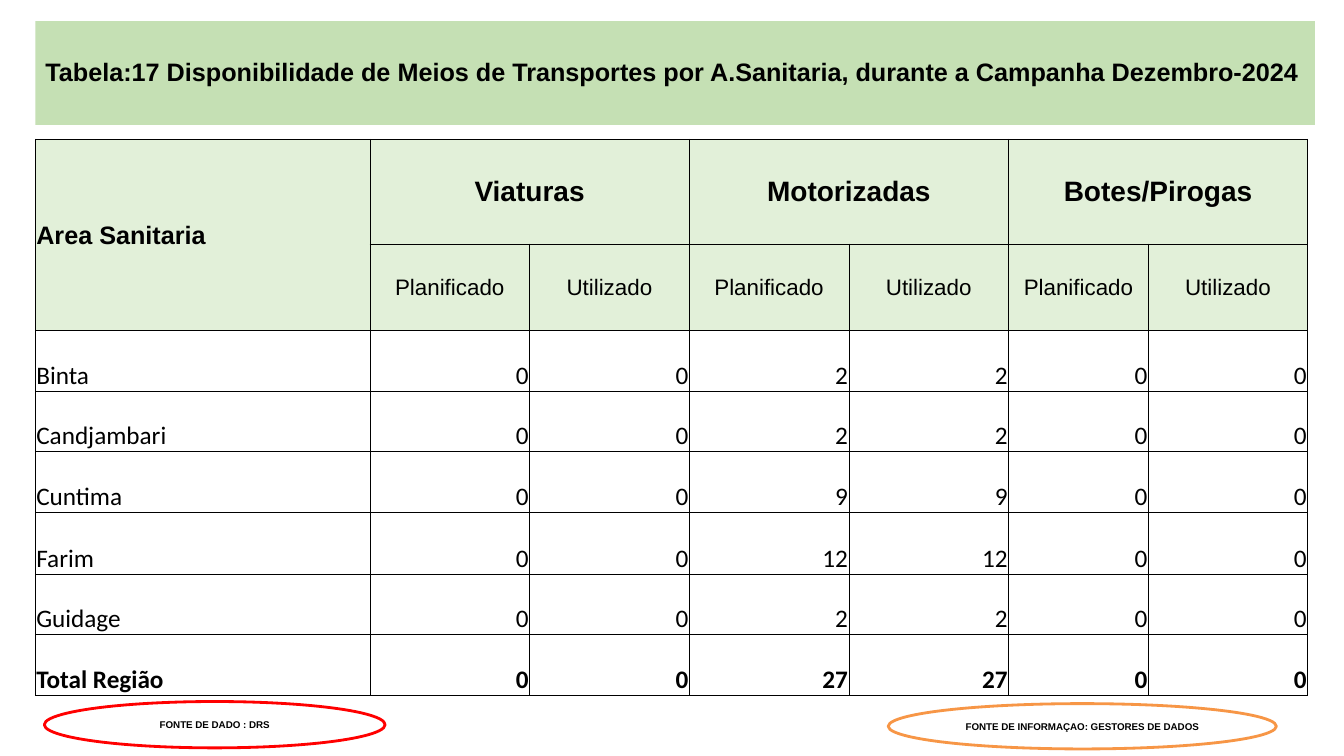
import dataclasses

import pptx
import pptx.dml.color
import pptx.enum.shapes
import pptx.enum.text
import pptx.oxml
import pptx.oxml.ns
import pptx.util

ALIGN = pptx.enum.text.PP_ALIGN
ANCHOR = pptx.enum.text.MSO_ANCHOR


@dataclasses.dataclass(frozen=True)
class Theme:
    head: str = "Arial"
    body: str = "Calibri"
    ink: str = "000000"
    paper: str = "FFFFFF"
    band: str = "C5E0B4"
    pale: str = "E2F0D9"
    red: str = "FF0000"
    amber: str = "F79646"
    big: int = 20
    main: int = 18
    sub: int = 16
    note: int = 7
    rule: float = 0.5
    ring: float = 2


def rgb(code):
    return pptx.dml.color.RGBColor.from_string(code)


class Page:
    """Lengths are hundredths of the slide's width (x) and height (y)."""

    def __init__(self, deck, theme):
        self.theme = theme
        self.wide, self.high = deck.slide_width, deck.slide_height
        self.slide = deck.slides.add_slide(deck.slide_layouts[5])

    def x(self, share):
        return round(self.wide * share / 100)

    def y(self, share):
        return round(self.high * share / 100)

    def box(self, left, top, width, height):
        return self.x(left), self.y(top), self.x(width), self.y(height)

    def label(self, frame, text, size, bold=True, font=None, align=ALIGN.LEFT):
        frame.text = text
        para = frame.paragraphs[0]
        para.alignment = align
        for run in para.runs:
            run.font.name = font or self.theme.head
            run.font.size = pptx.util.Pt(size)
            run.font.bold = bold
            run.font.color.rgb = rgb(self.theme.ink)
        return para

    def title(self, text, *place):
        shape = self.slide.shapes.title
        shape.left, shape.top, shape.width, shape.height = self.box(*place)
        shape.fill.solid()
        shape.fill.fore_color.rgb = rgb(self.theme.band)
        frame = shape.text_frame
        frame.word_wrap = True
        frame.auto_size = pptx.enum.text.MSO_AUTO_SIZE.NONE
        frame.vertical_anchor = ANCHOR.MIDDLE
        self.label(frame, text, self.theme.main).line_spacing = 0.9

    def oval(self, text, line, fill, *place):
        kind = pptx.enum.shapes.MSO_SHAPE.OVAL
        shape = self.slide.shapes.add_shape(kind, *self.box(*place))
        shape.shadow.inherit = False
        if fill:
            shape.fill.solid()
            shape.fill.fore_color.rgb = rgb(fill)
        else:
            shape.fill.background()
        shape.line.color.rgb = rgb(line)
        shape.line.width = pptx.util.Pt(self.theme.ring)
        shape.text_frame.word_wrap = True
        shape.text_frame.vertical_anchor = ANCHOR.MIDDLE
        self.label(shape.text_frame, text, self.theme.note, align=ALIGN.CENTER)

    def table(self, left, top, cols, rows):
        place = self.box(left, top, sum(cols), sum(rows))
        grid = self.slide.shapes.add_table(len(rows), len(cols), *place).table
        grid.first_row = grid.horz_banding = False
        for col, share in zip(grid.columns, cols):
            col.width = self.x(share)
        for row, share in zip(grid.rows, rows):
            row.height = self.y(share)
        for cell in grid.iter_cells():
            self.edge(cell)
        return grid

    def edge(self, cell):
        props = cell._tc.get_or_add_tcPr()
        space = pptx.oxml.ns.nsdecls("a")
        width = pptx.util.Pt(self.theme.rule)
        for side in "LRTB":
            props.append(pptx.oxml.parse_xml(
                f'<a:ln{side} {space} w="{width}"><a:solidFill>'
                f'<a:srgbClr val="{self.theme.ink}"/></a:solidFill></a:ln{side}>'))

    def cell(self, cell, text, fill, anchor, *args, **style):
        cell.fill.solid()
        cell.fill.fore_color.rgb = rgb(fill)
        cell.vertical_anchor = anchor
        cell.margin_left = cell.margin_right = cell.margin_top = pptx.util.Inches(0.01)
        cell.margin_bottom = 0
        self.label(cell.text_frame, text, *args, **style)


GROUPS = ("Viaturas", "Motorizadas", "Botes/Pirogas")
KINDS = ("Planificado", "Utilizado")
AREAS = (
    ("Binta", 0, 0, 2, 2, 0, 0),
    ("Candjambari", 0, 0, 2, 2, 0, 0),
    ("Cuntima", 0, 0, 9, 9, 0, 0),
    ("Farim", 0, 0, 12, 12, 0, 0),
    ("Guidage", 0, 0, 2, 2, 0, 0),
)
TOTAL = ("Total Região", *(sum(col) for col in list(zip(*AREAS))[1:]))


def main():
    deck = pptx.Presentation()
    deck.slide_width = pptx.util.Inches(13.33)
    deck.slide_height = pptx.util.Inches(7.5)
    theme = Theme()
    page = Page(deck, theme)

    # Title band
    page.title("Tabela:17 Disponibilidade de Meios de Transportes por A.Sanitaria, "
               "durante a Campanha Dezembro-2024", 2.63, 2.8, 95.2, 13.73)

    # Table grid
    cols = [24.9] + [11.88] * 4 + [10.4, 11.85]
    rows = [13.87, 11.47, 8, 8, 8, 8.2, 8, 8]
    grid = page.table(2.63, 18.4, cols, rows)

    # Table head
    top = (theme.pale, ANCHOR.MIDDLE)
    grid.cell(0, 0).merge(grid.cell(1, 0))
    page.cell(grid.cell(0, 0), "Area Sanitaria", *top, theme.main)
    for i, group in enumerate(GROUPS):
        first = 1 + i * len(KINDS)
        grid.cell(0, first).merge(grid.cell(0, first + 1))
        page.cell(grid.cell(0, first), group, *top, theme.big, align=ALIGN.CENTER)
        for j, kind in enumerate(KINDS):
            page.cell(grid.cell(1, first + j), kind, *top, theme.sub,
                      bold=False, align=ALIGN.CENTER)

    # Table body and total
    for r, row in enumerate((*AREAS, TOTAL), 2):
        for c, value in enumerate(row):
            page.cell(grid.cell(r, c), str(value), theme.paper, ANCHOR.BOTTOM,
                      theme.main, bold=row is TOTAL, font=theme.body,
                      align=ALIGN.RIGHT if c else ALIGN.LEFT)

    # Sources
    page.oval("FONTE DE DADO : DRS", theme.red, None, 3.3, 92.8, 25.36, 6.13)
    page.oval("FONTE DE INFORMAÇAO: GESTORES DE DADOS", theme.amber, theme.paper,
              66.09, 93.07, 28.88, 6)

    deck.save("out.pptx")


if __name__ == "__main__":
    main()
